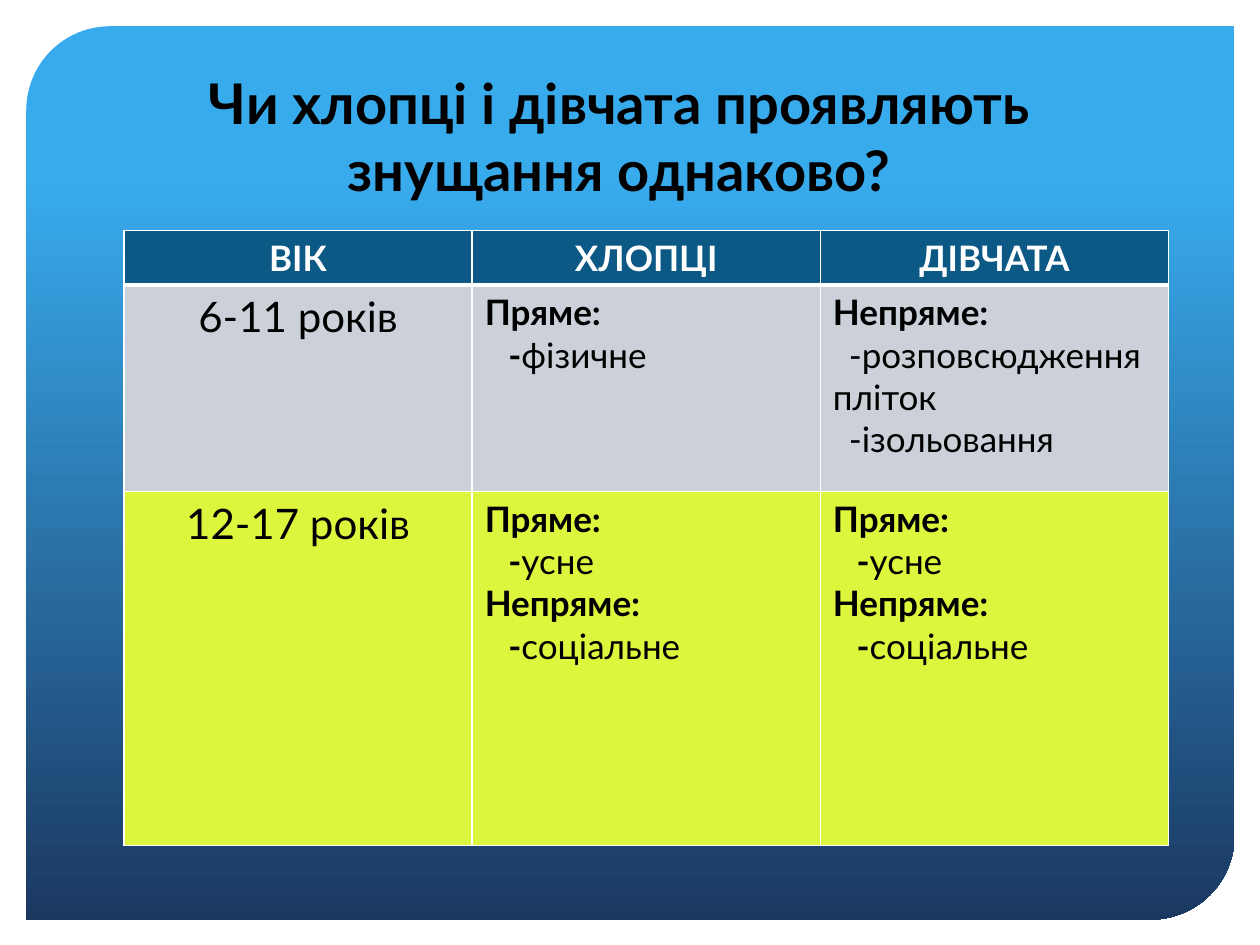
import pptx
import pptx.dml.color
import pptx.enum.shapes
import pptx.enum.text
import pptx.oxml.ns
import pptx.util
from lxml import etree

Pt = pptx.util.Pt
RGBColor = pptx.dml.color.RGBColor
ALIGN = pptx.enum.text.PP_ALIGN

FONT = "Lato"
BLACK = RGBColor(0x00, 0x00, 0x00)
WHITE = RGBColor(0xFF, 0xFF, 0xFF)
SKY = RGBColor(0x38, 0xAB, 0xED)
NAVY = RGBColor(0x1B, 0x38, 0x61)
HEADER_BLUE = RGBColor(0x0C, 0x59, 0x86)
GREY = RGBColor(0xCC, 0xD1, 0xD9)
LIME = RGBColor(0xDD, 0xF5, 0x3D)

TITLE_LINES = ["Чи хлопці і дівчата проявляють", "знущання однаково?"]
HEADERS = ["ВІК", "ХЛОПЦІ", "ДІВЧАТА"]
# Each form of bullying: heading, kinds, and whether the dash is bold
DIRECT_PHYSICAL = [("Пряме:", ["фізичне"], True)]
INDIRECT_GOSSIP = [("Непряме:", ["розповсюдження пліток", "ізольовання"], False)]
VERBAL_AND_SOCIAL = [("Пряме:", ["усне"], True), ("Непряме:", ["соціальне"], True)]
AGE_ROWS = [
    ("6-11 років", [DIRECT_PHYSICAL, INDIRECT_GOSSIP], GREY),
    ("12-17 років", [VERBAL_AND_SOCIAL, VERBAL_AND_SOCIAL], LIME),
]
ROW_HEIGHTS = [31.2, 118, 202.4]
COLUMN_WIDTH = 199


def add_span(para, text, size=20, color=BLACK, bold=False):
    span = para.add_run()
    span.text = text
    span.font.name = FONT
    span.font.size = Pt(size)
    span.font.color.rgb = color
    span.font.bold = bold


def add_backdrop(page):
    panel = page.shapes.add_shape(
        pptx.enum.shapes.MSO_SHAPE.ROUND_2_DIAG_RECTANGLE,
        Pt(15), Pt(15), Pt(690.5), Pt(510.5))
    panel.adjustments[0] = 0.094
    panel.adjustments[1] = 0
    panel.shadow.inherit = False
    panel.line.fill.background()
    panel.fill.gradient()
    panel.fill.gradient_angle = 270
    for stop, position, color in zip(panel.fill.gradient_stops, (0.17, 1), (SKY, NAVY)):
        stop.position = position
        stop.color.rgb = color


def add_title(page):
    box = page.shapes.add_textbox(Pt(20), Pt(39), Pt(668), Pt(77))
    frame = box.text_frame
    frame.word_wrap = True
    frame.margin_left = frame.margin_right = frame.margin_top = frame.margin_bottom = 0
    para = frame.paragraphs[0]
    para.alignment = ALIGN.CENTER
    for number, line in enumerate(TITLE_LINES):
        if number:
            para.add_line_break()
        add_span(para, line, size=32, bold=True)


def set_borders(cell, top=1, bottom=1):
    properties = cell._tc.get_or_add_tcPr()
    for side, width in (("L", 1), ("R", 1), ("T", top), ("B", bottom)):
        line = etree.SubElement(
            properties, pptx.oxml.ns.qn("a:ln" + side), w=str(Pt(width)))
        fill = etree.SubElement(line, pptx.oxml.ns.qn("a:solidFill"))
        etree.SubElement(fill, pptx.oxml.ns.qn("a:srgbClr"), val=str(WHITE))


def paint_cell(cell, color, **borders):
    set_borders(cell, **borders)
    cell.fill.solid()
    cell.fill.fore_color.rgb = color


def write_centred(cell, text, **style):
    para = cell.text_frame.paragraphs[0]
    para.alignment = ALIGN.CENTER
    add_span(para, text, **style)


def write_forms(cell, forms):
    """Bold headings, each followed by first-line indented kinds."""
    frame = cell.text_frame
    for number, (heading, kinds, bold_dash) in enumerate(forms):
        para = frame.add_paragraph() if number else frame.paragraphs[0]
        add_span(para, heading, bold=True)
        for kind in kinds:
            para = frame.add_paragraph()
            indent = Pt(13.5 if bold_dash else 9)
            properties = para._p.get_or_add_pPr()
            properties.set("marL", "0")
            properties.set("indent", str(indent))
            if bold_dash:
                add_span(para, "-", bold=True)
                add_span(para, kind)
            else:
                add_span(para, "-" + kind)


def add_age_table(page):
    table = page.shapes.add_table(
        len(ROW_HEIGHTS), len(HEADERS), Pt(70.8), Pt(131.6),
        Pt(COLUMN_WIDTH * len(HEADERS)), Pt(sum(ROW_HEIGHTS))).table
    for column in table.columns:
        column.width = Pt(COLUMN_WIDTH)
    for row, height in zip(table.rows, ROW_HEIGHTS):
        row.height = Pt(height)
    for column, header in enumerate(HEADERS):
        cell = table.cell(0, column)
        paint_cell(cell, HEADER_BLUE, bottom=3)
        write_centred(cell, header, color=WHITE, bold=True)
    for row, (age, columns, color) in enumerate(AGE_ROWS, start=1):
        for column in range(len(HEADERS)):
            paint_cell(table.cell(row, column), color, top=3 if row == 1 else 1)
        write_centred(table.cell(row, 0), age, size=24)
        for column, forms in enumerate(columns, start=1):
            write_forms(table.cell(row, column), forms)


def main():
    deck = pptx.Presentation()
    deck.slide_width, deck.slide_height = Pt(720), Pt(540)
    page = deck.slides.add_slide(deck.slide_layouts[6])
    add_backdrop(page)
    add_title(page)
    add_age_table(page)
    deck.save("out.pptx")


if __name__ == "__main__":
    main()
